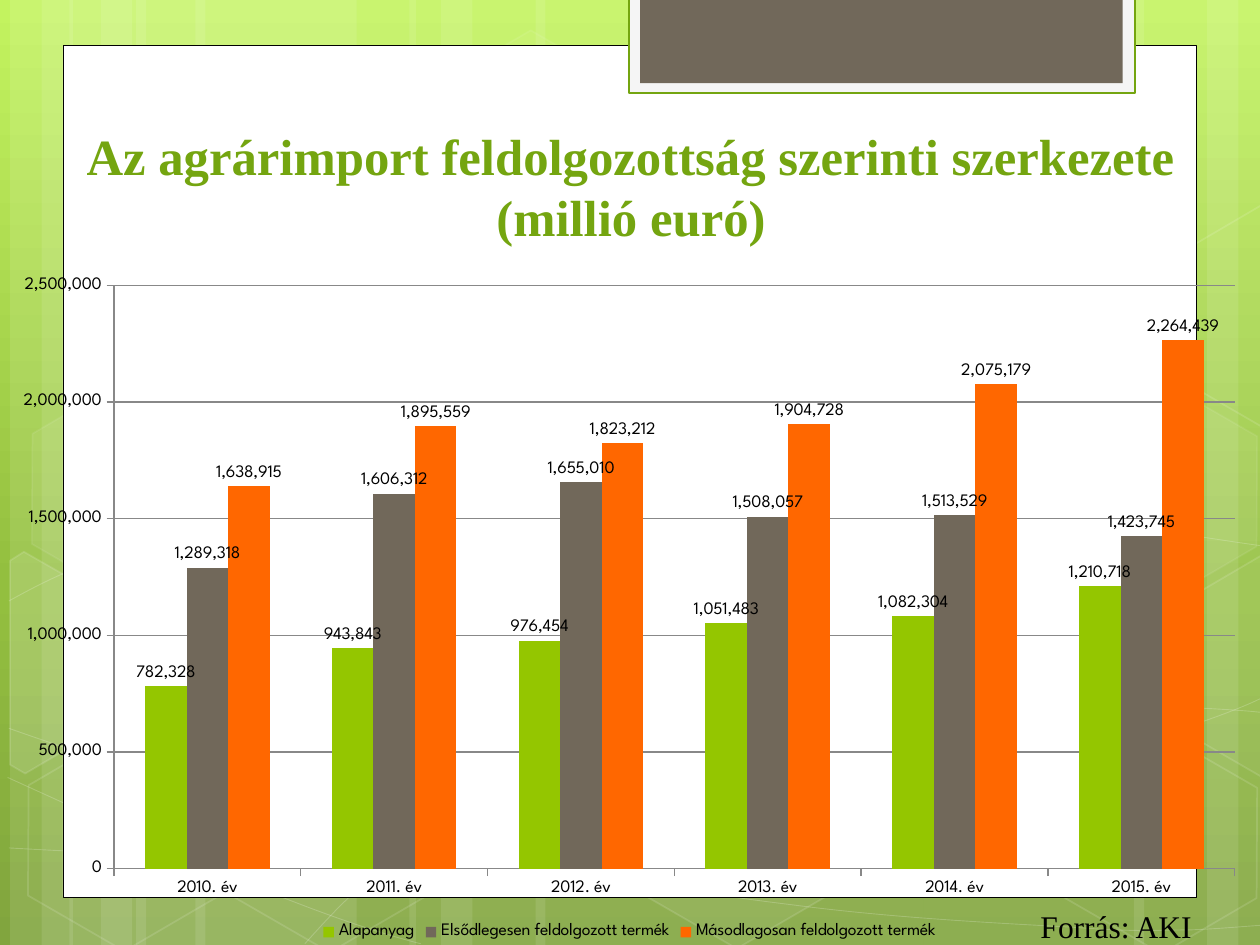
from copy import deepcopy
from dataclasses import dataclass

from lxml.etree import SubElement, fromstring
from pptx import Presentation
from pptx.chart.data import CategoryChartData
from pptx.dml.color import RGBColor
from pptx.enum.chart import (XL_CHART_TYPE as ChartType, XL_LABEL_POSITION as LabelPosition,
                             XL_LEGEND_POSITION as LegendPosition, XL_TICK_MARK as TickMark)
from pptx.enum.shapes import MSO_SHAPE as Preset
from pptx.enum.text import MSO_ANCHOR as Anchor, PP_ALIGN as Align
from pptx.oxml.ns import nsdecls, qn
from pptx.util import Pt

PX = 9144  # EMU per px, 100 px to the inch
WIDTH, HEIGHT = 1000, 750


@dataclass(frozen=True)
class Theme:
    white: str = "FFFFFF"
    black: str = "000000"
    frame: str = "F5F5F5"
    title: str = "74A510"
    brown: str = "71685A"
    grid: str = "888888"
    backdrop: tuple = ((0, "C3F35F"), (0.62, "93BF3F"), (1, "81A53E"))
    series: tuple = ("94C600", "71685A", "FF6700")
    serif: str = "Times New Roman"
    sans: str = "League Spartan"
    title_size: int = 29
    source_size: int = 18
    chart_size: int = 10


THEME = Theme()

STRIPS = [(108, 175), (8, 50), (33, 83), (155, 175), (55, 50), (80, 83),
          (733, 175), (958, 50), (900, 83), (425, 308), (325, 50), (350, 83)]

# Start point, then cubic segments: two control points and an end point
CURVES = [
    [(7, 673), (61, 676), (115, 679), (190, 678), (265, 677), (358, 675), (458, 665),
     (558, 655), (700, 636), (792, 617), (883, 598), (977, 568), (1007, 551)],
    [(7, 477), (36, 461), (65, 446), (121, 431), (178, 416), (259, 394), (347, 387),
     (436, 380), (544, 379), (654, 387), (764, 395), (947, 426), (1007, 434)],
    [(6, 617), (127, 672), (247, 727), (334, 749)],
    [(7, 578), (38, 589), (70, 600), (128, 616), (186, 631), (273, 656), (357, 673),
     (440, 690), (545, 708), (628, 718), (711, 729), (800, 733), (853, 736),
     (905, 740), (919, 738), (945, 738), (971, 737), (989, 735), (1007, 734)],
    [(242, 749), (260, 729), (278, 709), (302, 691), (326, 673), (360, 653), (388, 639),
     (416, 625), (433, 619), (470, 609), (506, 599), (573, 585), (608, 578),
     (644, 571), (649, 571), (680, 569), (711, 566), (760, 563), (794, 562),
     (829, 561), (886, 562), (886, 562), (908, 562), (931, 562), (953, 562),
     (971, 563), (988, 564), (997, 565), (1006, 566), (1003, 565), (1006, 566)],
]

# Left, top, fill opacity and line opacity in percent
HEXAGONS = [(334, 36, 4, 8), (497, 589, 6, 12), (11, 591, 0, 12), (14, 312, 7, 8),
            (174, 592, 0, 12), (753, 453, 10, 12), (834, 593, 0, 12), (834, 314, 7, 8)]

# Hexagons cut by the slide edge: fill opacity and corners
CUT_HEXAGONS = [
    (10, [(8, 445), (19, 438), (96, 482), (95, 570), (20, 614), (8, 607)]),
    (4, [(926, 485), (1001, 441), (1009, 446), (1009, 613), (1002, 617), (926, 573)]),
    (0, [(926, 207), (1001, 163), (1010, 168), (1009, 335), (1002, 339), (926, 295)]),
]

YEARS = [f"{year}. év" for year in range(2010, 2016)]
IMPORTS = {
    "Alapanyag": (782328, 943843, 976454, 1051483, 1082304, 1210718),
    "Elsődlegesen feldolgozott termék":
        (1289318, 1606312, 1655010, 1508057, 1513529, 1423745),
    "Másodlagosan feldolgozott termék":
        (1638915, 1895559, 1823212, 1904728, 2075179, 2264439),
}


def rgb(color):
    return RGBColor.from_string(color)


def set_opacity(shape, where, percent):
    for color in shape.element.xpath(f"./p:spPr/{where}a:solidFill/a:srgbClr"):
        SubElement(color, qn("a:alpha")).set("val", str(percent * 1000))


def paint(shape, fill=None, fill_opacity=100, line=None, width=1, line_opacity=100):
    shape.shadow.inherit = False
    if fill and fill_opacity:
        shape.fill.solid()
        shape.fill.fore_color.rgb = rgb(fill)
        if fill_opacity < 100:
            set_opacity(shape, "", fill_opacity)
    else:
        shape.fill.background()
    if line:
        shape.line.color.rgb = rgb(line)
        shape.line.width = Pt(width)
        if line_opacity < 100:
            set_opacity(shape, "a:ln/", line_opacity)
    else:
        shape.line.fill.background()


def add_preset(slide, box, preset=Preset.RECTANGLE, **style):
    shape = slide.shapes.add_shape(preset, *(value * PX for value in box))
    paint(shape, **style)
    return shape


def add_outline(slide, box, points, close, **style):
    emu = [((box[0] + x) * PX, (box[1] + y) * PX) for x, y in points]
    builder = slide.shapes.build_freeform(*emu[0])
    builder.add_line_segments(emu[1:], close=close)
    shape = builder.convert_to_shape()
    paint(shape, **style)
    return shape


def bend(shape):
    """Turn each three line segments into one cubic segment."""
    outline = shape.element.xpath(".//a:path")[0]
    lines = outline.findall(qn("a:lnTo"))
    for first in range(0, len(lines), 3):
        cubic = SubElement(outline, qn("a:cubicBezTo"))
        for line in lines[first:first + 3]:
            cubic.append(line[0])
            outline.remove(line)


def add_backdrop(slide, box):
    left, top, _, height = box
    # Vertical gradient with three stops
    fill = slide.background.fill
    fill.gradient()
    fill.gradient_angle = 270
    stop_list = slide.element.xpath(".//p:bg//a:gsLst")[0]
    stop_list.append(deepcopy(stop_list[-1]))
    for stop, (position, color) in zip(fill.gradient_stops, THEME.backdrop):
        stop.color.rgb = rgb(color)
        stop.position = position
    # Light strips
    for x, width in STRIPS:
        add_preset(slide, (left + x, top, width, height), fill=THEME.white, fill_opacity=10)
    # Thin curves
    for nodes in CURVES:
        bend(add_outline(slide, box, nodes, False,
                         line=THEME.white, width=0.5, line_opacity=20))
    # Hexagons
    for x, y, fill_opacity, line_opacity in HEXAGONS:
        hexagon = add_preset(slide, (left + x, top + y, 175, 152), Preset.HEXAGON,
                             fill=THEME.white, fill_opacity=fill_opacity,
                             line=THEME.white, line_opacity=line_opacity)
        hexagon.adjustments[0], hexagon.adjustments[1] = 0.285, 1.155
        hexagon.rotation = 30
    for fill_opacity, corners in CUT_HEXAGONS:
        add_outline(slide, box, corners, True, fill=THEME.white, fill_opacity=fill_opacity,
                    line=THEME.white, line_opacity=12)


def add_panel(slide, box):
    left, top, _, _ = box
    add_preset(slide, box, fill=THEME.white, line=THEME.black, width=0.5)
    # Tab hanging over the top edge
    add_preset(slide, (left + 449, top - 38, 402, 76), fill=THEME.frame,
               line=THEME.title, width=1.25)
    add_preset(slide, (left + 458, top - 38, 383, 68), fill=THEME.brown)


def add_text(slide, box, text, size, color, bold=False, align=Align.LEFT,
             anchor=Anchor.TOP):
    frame = slide.shapes.add_textbox(*(value * PX for value in box)).text_frame
    frame.word_wrap = True
    frame.vertical_anchor = anchor
    paragraph = frame.paragraphs[0]
    paragraph.alignment = align
    run = paragraph.add_run()
    run.text = text
    run.font.name, run.font.size, run.font.bold = THEME.serif, Pt(size), bold
    run.font.color.rgb = rgb(color)


def add_import_chart(slide, box):
    data = CategoryChartData(number_format="#,##0")
    data.categories = YEARS
    for name, values in IMPORTS.items():
        data.add_series(name, values)
    chart = slide.shapes.add_chart(ChartType.COLUMN_CLUSTERED,
                                   *(value * PX for value in box), data).chart
    chart.has_title = False
    chart.font.name, chart.font.size = THEME.sans, Pt(THEME.chart_size)
    chart.font.color.rgb = rgb(THEME.black)
    chart.has_legend = True
    chart.legend.position = LegendPosition.BOTTOM
    chart.legend.include_in_layout = False
    # Axes and gridlines
    values = chart.value_axis
    values.minimum_scale, values.maximum_scale, values.major_unit = 0, 2500000, 500000
    values.has_major_gridlines = True
    values.tick_labels.number_format = "#,##0"
    values.tick_labels.number_format_is_linked = False
    for axis in (chart.category_axis, values):
        axis.major_tick_mark = TickMark.OUTSIDE
        axis.format.line.color.rgb = rgb(THEME.grid)
    values.major_gridlines.format.line.color.rgb = rgb(THEME.grid)
    # Columns and their labels
    plot = chart.plots[0]
    plot.gap_width, plot.overlap, plot.vary_by_categories = 150, 0, False
    for series, color in zip(plot.series, THEME.series):
        series.format.fill.solid()
        series.format.fill.fore_color.rgb = rgb(color)
        labels = series.data_labels
        labels.show_value = True
        labels.number_format, labels.number_format_is_linked = "#,##0", False
        labels.position = LabelPosition.OUTSIDE_END
    # Inner plot area, in px within the chart box
    area = chart.element.xpath(".//c:plotArea")[0]
    for layout in area.findall(qn("c:layout")):
        area.remove(layout)
    _, _, width, height = box
    sizes = "".join(f'<c:{tag} val="{value}"/>' for tag, value in (
        ("layoutTarget", "inner"), ("xMode", "edge"), ("yMode", "edge"),
        ("x", 91.5 / width), ("y", 16.5 / height), ("w", 889.5 / width), ("h", 463 / height)))
    area.insert(0, fromstring(f'<c:layout {nsdecls("c")}><c:manualLayout>{sizes}'
                              "</c:manualLayout></c:layout>"))


def main():
    presentation = Presentation()
    presentation.slide_width, presentation.slide_height = WIDTH * PX, HEIGHT * PX
    slide = presentation.slides.add_slide(presentation.slide_layouts[6])
    add_backdrop(slide, (0, 0, WIDTH, HEIGHT))
    add_panel(slide, (50, 36, 900, 676))
    add_text(slide, (51, 107, 900, 94),
             "Az agrárimport feldolgozottság szerinti szerkezete (millió euró)",
             THEME.title_size, THEME.title, True, Align.CENTER, Anchor.BOTTOM)
    add_import_chart(slide, (-1, 210, 1001, 540))
    add_text(slide, (816, 715, 157, 71), "Forrás: AKI", THEME.source_size, THEME.black)
    presentation.save("out.pptx")


if __name__ == "__main__":
    main()
